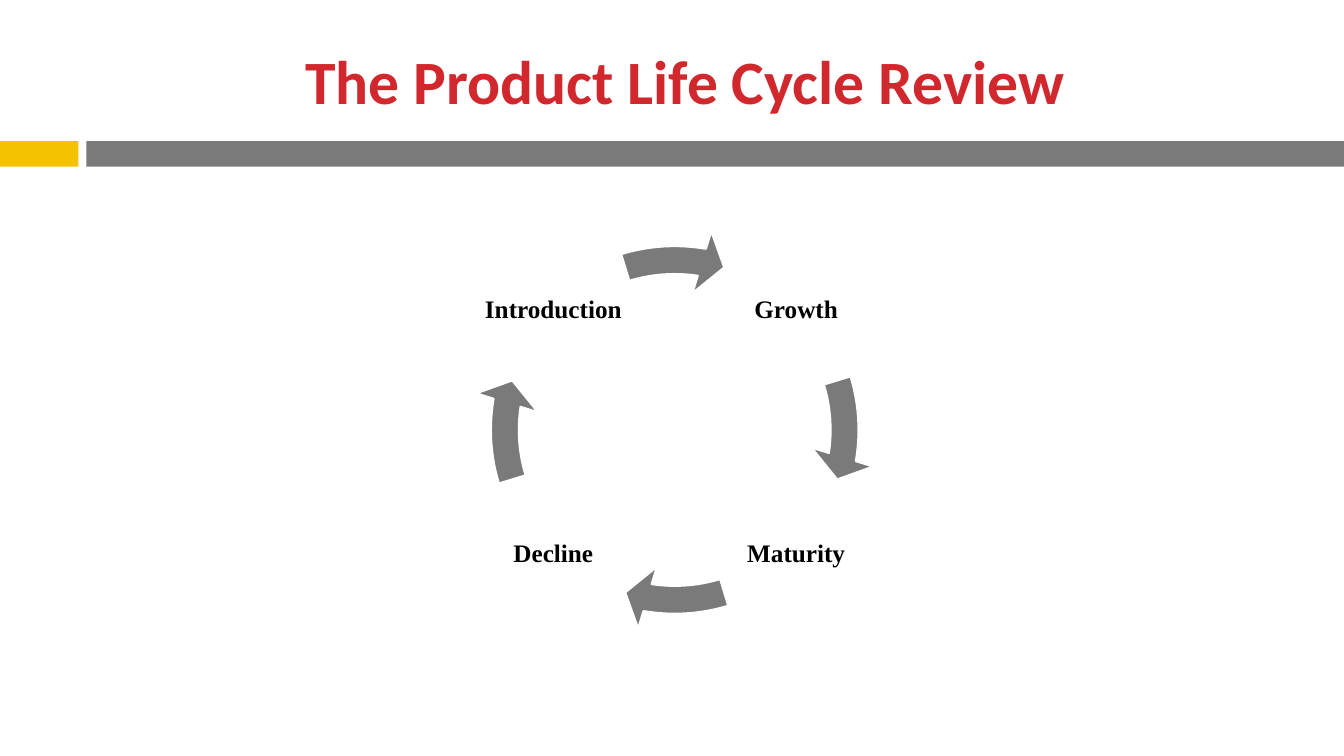
from pptx import Presentation
from pptx import util as u
from pptx.dml.color import RGBColor
from pptx.enum import shapes, text

COLORS = {"title": "D1282E", "accent": "F5C201", "gray": "7A7A7A",
          "label": "000000", "edge": "FFFFFF"}
TITLE = {"name": "Calibri", "size": u.Pt(44), "bold": True}
LABEL = {"name": "Times New Roman", "size": u.Pt(18), "bold": True}
FULL_TURN = 216
QUARTER = FULL_TURN / 4


def rgb(key):
    return RGBColor.from_string(COLORS[key])


class CycleSlide:
    def __init__(self, prs):
        self.s = prs.slides.add_slide(prs.slide_layouts[5])

    def add_words(self, sp, words, style, color, margin):
        tf = sp.text_frame
        frame = {"vertical_anchor": text.MSO_ANCHOR.MIDDLE, "word_wrap": False}
        for side in ("left", "top", "right", "bottom"):
            frame[f"margin_{side}"] = u.Cm(margin)
        for key, value in frame.items():
            setattr(tf, key, value)
        p = tf.paragraphs[0]
        p.alignment = text.PP_ALIGN.CENTER
        r = p.add_run()
        r.text = words
        for key, value in style.items():
            setattr(r.font, key, value)
        r.font.color.rgb = rgb(color)

    def title(self, words, left, top, width, height):
        sp = self.s.shapes.title
        box = {"left": left, "top": top, "width": width, "height": height}
        for key, value in box.items():
            setattr(sp, key, u.Cm(value))
        self.add_words(sp, words, TITLE, "title", 0.2)

    def label(self, words, left, top, size):
        sp = self.s.shapes.add_textbox(*map(u.Cm, (left, top, size, size)))
        self.add_words(sp, words, LABEL, "label", 0.08)

    def shape(self, kind, color, *box):
        sp = self.s.shapes.add_shape(kind, *map(u.Cm, box))
        sp.shadow.inherit = False
        sp.fill.solid()
        sp.fill.fore_color.rgb = rgb(color)
        sp.line.fill.background()
        return sp

    def bar(self, color, left, width):
        self.shape(shapes.MSO_SHAPE.RECTANGLE, color, left, 3.56, width, 0.64)

    def arrow(self, step, left, top, size):
        sp = self.shape(shapes.MSO_SHAPE.CIRCULAR_ARROW, "gray", left, top, size, size)
        sp.line.color.rgb = rgb("edge")
        sp.line.width = u.Pt(1.5)
        end = 5.515 + step * QUARTER
        start = (205.837 + step * QUARTER) % FULL_TURN
        for i, value in enumerate((0.069, 4.649, end, start, 0.08)):
            sp.adjustments[i] = value


def main():
    prs = Presentation()
    prs.slide_width, prs.slide_height = u.Cm(33.87), u.Cm(19.05)
    slide = CycleSlide(prs)
    slide.title("The Product Life Cycle Review", 5.94, 0.64, 22.66, 2.74)
    slide.bar("accent", 0, 1.98)
    slide.bar("gray", 2.18, 31.69)
    left, right, top, bottom = 12.14, 18.26, 5.97, 12.12
    stages = [("Growth", right, top), ("Maturity", right, bottom),
              ("Decline", left, bottom), ("Introduction", left, top)]
    for step, (name, x, y) in enumerate(stages):
        slide.label(name, x, y, 3.61)
        slide.arrow(step, 11.91, 5.74, 10.19)
    prs.save("out.pptx")


if __name__ == "__main__":
    main()
